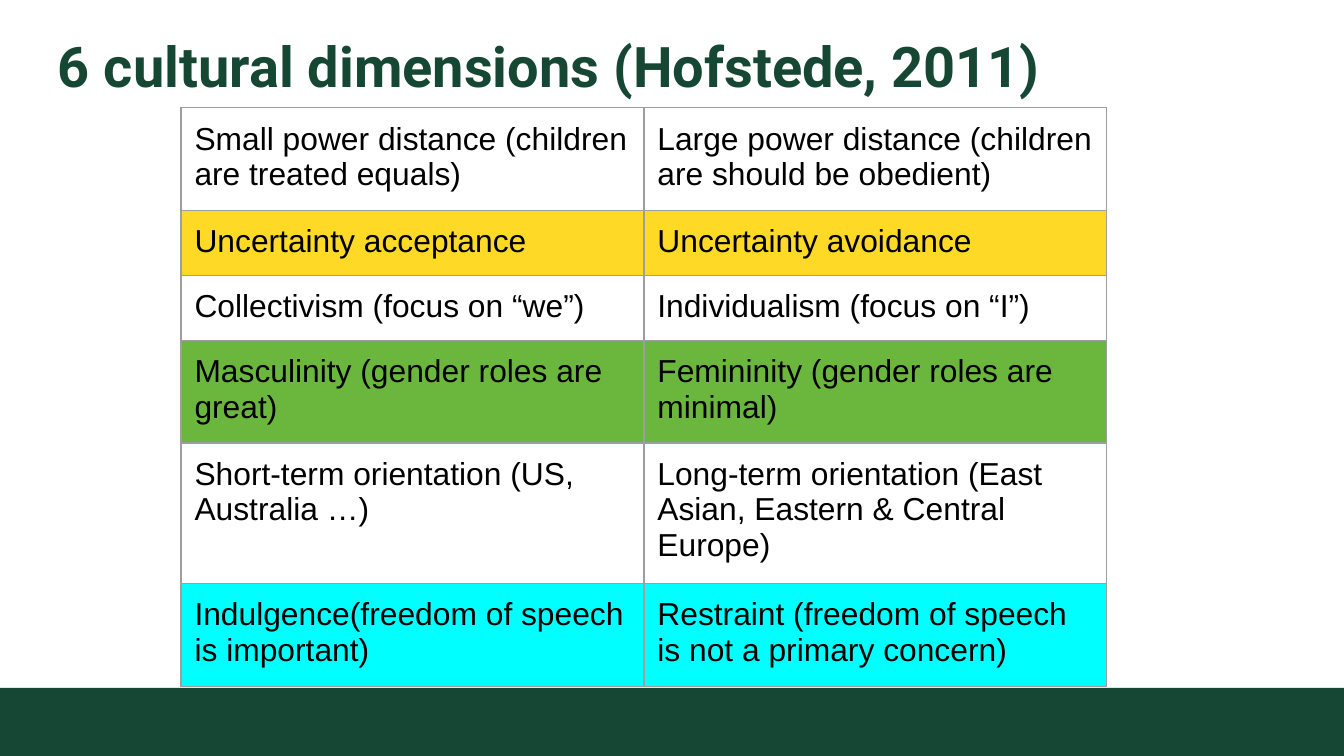
from lxml.etree import SubElement
from pptx import Presentation
from pptx.dml.color import RGBColor
from pptx.enum.shapes import MSO_SHAPE
from pptx.enum.text import MSO_ANCHOR, PP_ALIGN
from pptx.oxml.ns import qn
from pptx.util import Pt

GREEN = "154734"
BORDER = "9E9E9E"


def paint(target, colour):
    """Give a fill a solid colour."""
    target.solid()
    target.fore_color.rgb = RGBColor.from_string(colour)


def add_borders(cell):
    """Draw a thin grey line on each side of a table cell."""
    properties = cell._tc.get_or_add_tcPr()
    for side in ("a:lnL", "a:lnR", "a:lnT", "a:lnB"):
        line = SubElement(properties, qn(side), w=str(Pt(0.75)))
        fill = SubElement(line, qn("a:solidFill"))
        SubElement(fill, qn("a:srgbClr"), val=BORDER)


deck = Presentation()
deck.slide_width, deck.slide_height = Pt(720), Pt(405)
page = deck.slides.add_slide(deck.slide_layouts[5])
paint(page.background.fill, "FFFFFF")

# Footer bar
bar = page.shapes.add_shape(MSO_SHAPE.RECTANGLE, Pt(0), Pt(368.5), Pt(720), Pt(36.5))
bar.shadow.inherit = False
paint(bar.fill, GREEN)
bar.line.fill.background()

# Title
title = page.shapes.title
title.left, title.top, title.width, title.height = Pt(31), Pt(21.6), Pt(658), Pt(31.7)
frame = title.text_frame
frame.text = "6 cultural dimensions (Hofstede, 2011)"
frame.margin_left = frame.margin_right = frame.margin_top = frame.margin_bottom = 0
frame.vertical_anchor = MSO_ANCHOR.MIDDLE
para = frame.paragraphs[0]
para.alignment = PP_ALIGN.LEFT
para.line_spacing = 0.9
span = para.runs[0]
span.font.name, span.font.size, span.font.bold = "Roboto", Pt(30), True
span.font.color.rgb = RGBColor.from_string(GREEN)

# Dimensions: row height, row colour, the two opposite poles
dimensions = [
    (55, None, "Small power distance (children are treated equals)",
     "Large power distance (children are should be obedient)"),
    (34.8, "FED925", "Uncertainty acceptance", "Uncertainty avoidance"),
    (34.8, None, "Collectivism (focus on “we”)", "Individualism (focus on “I”)"),
    (55, "6BB73E", "Masculinity (gender roles are great)",
     "Femininity (gender roles are minimal)"),
    (75.3, None, "Short-term orientation (US, Australia …)",
     "Long-term orientation (East Asian, Eastern & Central Europe)"),
    (55, "00FFFF", "Indulgence(freedom of speech is important)",
     "Restraint (freedom of speech is not a primary concern)"),
]

# Table of dimensions
total_height = sum(row[0] for row in dimensions)
table = page.shapes.add_table(
    len(dimensions), 2, Pt(97), Pt(57.8), Pt(496), Pt(total_height)).table
table.first_row = table.horz_banding = False
for column in table.columns:
    column.width = Pt(248)

for row, (height, colour, *poles) in zip(table.rows, dimensions):
    row.height = Pt(height)
    for cell, pole in zip(row.cells, poles):
        cell.text = pole
        cell.margin_left = cell.margin_right = Pt(7.2)
        cell.margin_top = cell.margin_bottom = Pt(7.2)
        add_borders(cell)
        if colour:
            paint(cell.fill, colour)
        else:
            cell.fill.background()
        span = cell.text_frame.paragraphs[0].runs[0]
        span.font.name, span.font.size = "Arial", Pt(17)
        span.font.color.rgb = RGBColor.from_string("000000")

deck.save("out.pptx")
